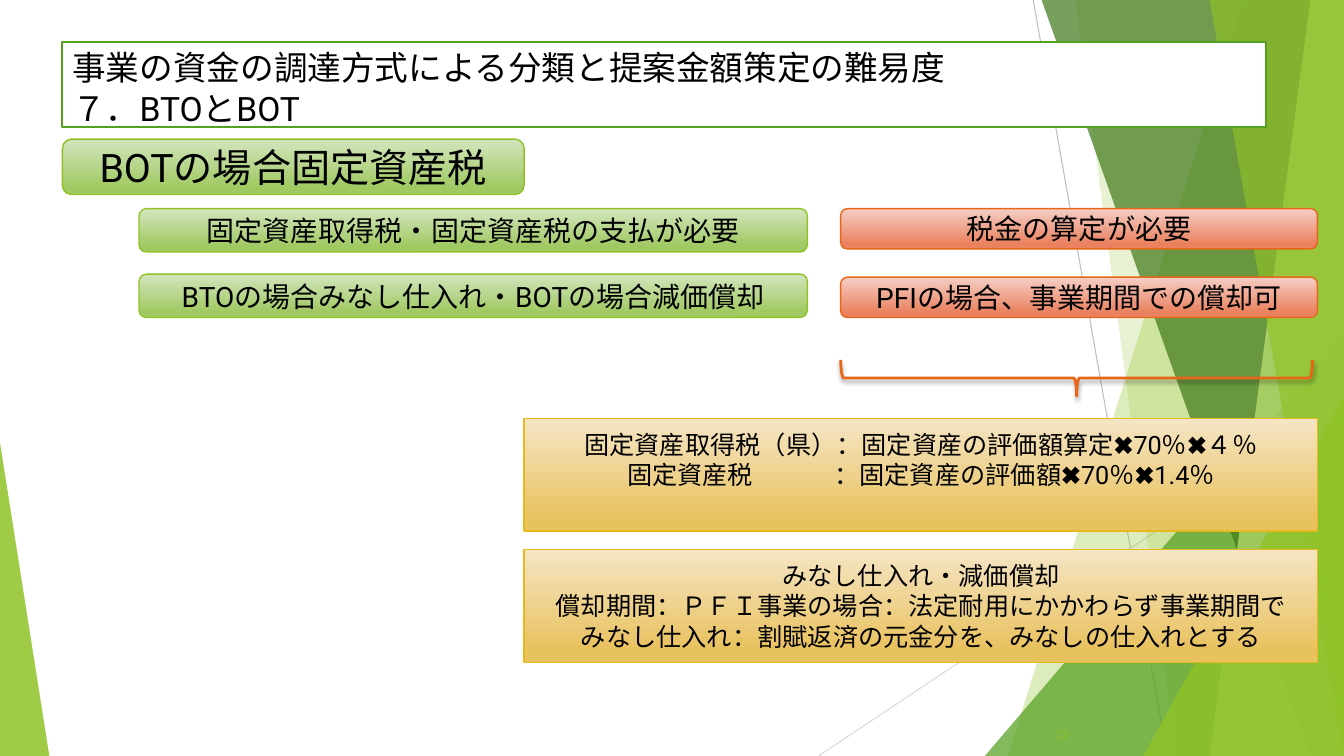
from dataclasses import dataclass

from lxml import etree
from pptx import Presentation
from pptx.dml.color import RGBColor
from pptx.enum.shapes import MSO_CONNECTOR, MSO_SHAPE
from pptx.enum.text import MSO_ANCHOR, PP_ALIGN
from pptx.oxml.ns import qn
from pptx.util import Inches, Pt

STRAIGHT = MSO_CONNECTOR.STRAIGHT
RECT, ROUNDED = MSO_SHAPE.RECTANGLE, MSO_SHAPE.ROUNDED_RECTANGLE
TRIANGLE, BRACE = MSO_SHAPE.ISOSCELES_TRIANGLE, MSO_SHAPE.RIGHT_BRACE
TOP, MIDDLE = MSO_ANCHOR.TOP, MSO_ANCHOR.MIDDLE
LEFT, CENTER = PP_ALIGN.LEFT, PP_ALIGN.CENTER

# Grid of 40 columns by 30 rows
COLUMNS, ROWS = 40, 30
SLIDE_W, SLIDE_H = Inches(13.33), Inches(7.5)
COL, ROW = SLIDE_W / COLUMNS, SLIDE_H / ROWS


@dataclass(frozen=True)
class Theme:
    font: str = "Roboto"
    ink: str = "000000"
    paper: str = "FFFFFF"
    lime: str = "90C226"
    leaf: str = "54A021"
    forest: str = "3F7819"
    pale_lime: str = "C0E474"
    orange: str = "E76618"
    ray: str = "BFBFBF"
    pale_ray: str = "D9D9D9"
    # Each panel style: gradient top, gradient bottom, outline
    green_panel: tuple = ("D3E5BE", "A0C962", "90C226")
    red_panel: tuple = ("F5CEC5", "EA815F", "E76618")
    gold_panel: tuple = ("F5E5C5", "E9C260", "E6B91E")
    title_size: int = 24
    topic_size: int = 28
    point_size: int = 20
    note_size: int = 18
    number_size: int = 9


THEME = Theme()


def rgb(code):
    return RGBColor.from_string(code)


def emu(box):
    left, top, width, height = box
    return [round(v) for v in (left * COL, top * ROW, width * COL, height * ROW)]


def set_all(target, values):
    for name, value in values.items():
        setattr(target, name, value)


def add_plain(slide, kind, box):
    shape = slide.shapes.add_shape(kind, *emu(box))
    shape.shadow.inherit = False
    return shape


def outline(shape, color, width):
    shape.line.color.rgb = rgb(color)
    shape.line.width = Pt(width)


def write(shape, lines, size, color=THEME.ink, align=CENTER, **frame_format):
    frame = shape.text_frame
    set_all(frame, {"word_wrap": True, "vertical_anchor": MIDDLE, **frame_format})
    frame.text = "\n".join(lines)
    for paragraph in frame.paragraphs:
        paragraph.alignment = align
        for run in paragraph.runs:
            set_all(run.font, {"name": THEME.font, "size": Pt(size)})
            run.font.color.rgb = rgb(color)


def add_panel(slide, kind, box, style, lines, size, **frame_format):
    upper, lower, edge = style
    panel = add_plain(slide, kind, box)
    panel.fill.gradient()
    panel.fill.gradient_angle = 270
    for stop, color, position in zip(panel.fill.gradient_stops, (upper, lower), (0, 0.88)):
        stop.color.rgb = rgb(color)
        stop.position = position
    outline(panel, edge, 1)
    write(panel, lines, size, **frame_format)


def tint(shape, color, opacity):
    shape.shadow.inherit = False
    shape.fill.solid()
    shape.fill.fore_color.rgb = rgb(color)
    shape.line.fill.background()
    color_node = shape.fill._xPr.find(qn("a:solidFill"))[0]
    etree.SubElement(color_node, qn("a:alpha"), val=str(opacity * 1000))


def add_ray(slide, start, end, color):
    points = [round(v) for x, y in (start, end) for v in (x * COL, y * ROW)]
    ray = slide.shapes.add_connector(STRAIGHT, *points)
    outline(ray, color, 0.75)
    etree.SubElement(ray._element.spPr, qn("a:effectLst"))


def add_band(slide, box, top_x, bottom_x, color, opacity):
    """Facet from a slanted left edge to the right side of the box."""
    left, top, width, height = box
    right, bottom = left + width, top + height
    builder = slide.shapes.build_freeform(top_x, top, scale=(COL, ROW))
    builder.add_line_segments([(right, top), (right, bottom), (bottom_x, bottom)])
    tint(builder.convert_to_shape(), color, opacity)


def add_corner(slide, box, apex, color, opacity):
    corner = add_plain(slide, TRIANGLE, box)
    corner.adjustments[0] = apex
    tint(corner, color, opacity)


def draw_backdrop(slide, box):
    left, top, width, height = box
    right, bottom = left + width, top + height
    add_ray(slide, (30.75, top), (34.74, bottom), THEME.ray)
    add_ray(slide, (right, 16.12), (24.36, bottom), THEME.pale_ray)

    def bands(facets):
        for facet in facets:
            add_band(slide, box, *facet)

    def right_corner(x, y, color, opacity):
        add_corner(slide, (x, y, right - x, bottom - y), 1, color, opacity)

    bands([(36.84, 30.12, THEME.lime, 30), (31.5, 35.49, THEME.lime, 20)])
    right_corner(29.31, 13.32, THEME.leaf, 72)
    bands([(30.63, 38.73, THEME.forest, 70),
           (39.09, 35.76, THEME.pale_lime, 70),
           (35.88, 39.54, THEME.lime, 65)])
    right_corner(34.02, 15.72, THEME.lime, 80)
    add_corner(slide, (left, 17.56, 1.47, bottom - 17.56), 0, THEME.lime, 85)


def draw_title(slide, box):
    title = add_plain(slide, RECT, box)
    title.fill.solid()
    title.fill.fore_color.rgb = rgb(THEME.paper)
    outline(title, THEME.leaf, 1.5)
    write(title, ["事業の資金の調達方式による分類と提案金額策定の難易度\v７．BTOとBOT"],
          THEME.title_size, align=LEFT, vertical_anchor=TOP)


def draw_stack(slide, box, pitch, kind, style, size, entries):
    """Panels of one size, one below the other, starting at the box."""
    left, top, width, height = box
    for index, (lines, frame_format) in enumerate(entries):
        place = (left, top + index * pitch, width, height)
        add_panel(slide, kind, place, style, lines, size, **frame_format)


def draw_brace(slide, box):
    """Brace turned by a quarter so that it fills the box and points down."""
    left, top, width, height = emu(box)
    brace = slide.shapes.add_shape(BRACE, left + (width - height) // 2,
                                   top + (height - width) // 2, height, width)
    brace.rotation = 90
    brace.fill.background()
    outline(brace, THEME.orange, 2)
    brace.shadow.inherit = False
    effects = brace._element.spPr.find(qn("a:effectLst"))
    shadow = etree.SubElement(effects, qn("a:outerShdw"), blurRad=str(Pt(3)),
                              dist=str(Pt(2)), dir="5400000", rotWithShape="0")
    shade = etree.SubElement(shadow, qn("a:srgbClr"), val=THEME.ink)
    etree.SubElement(shade, qn("a:alpha"), val="35000")


def draw_number(slide, box):
    number = slide.shapes.add_textbox(*emu(box))
    write(number, ["23"], THEME.number_size, THEME.lime)


def main():
    deck = Presentation()
    set_all(deck, {"slide_width": SLIDE_W, "slide_height": SLIDE_H})
    slide = deck.slides.add_slide(deck.slide_layouts[6])

    draw_backdrop(slide, (0, 0, COLUMNS, ROWS))
    draw_number(slide, (30.6, 28.4, 2, 1.5))
    draw_title(slide, (1.86, 1.68, 35.82, 3.36))

    # Topic and its points, with the consequences on the right
    add_panel(slide, ROUNDED, (1.86, 5.52, 13.74, 2.2), THEME.green_panel,
              ["BOTの場合固定資産税"], THEME.topic_size)
    draw_stack(slide, (4.14, 8.28, 19.89, 1.72), 2.6, ROUNDED, THEME.green_panel,
               THEME.point_size,
               [(["固定資産取得税・固定資産税の支払が必要"], {}),
                (["BTOの場合みなし仕入れ・BOTの場合減価償却"], {})])
    draw_stack(slide, (25.02, 8.28, 14.19, 1.6), 2.72, ROUNDED, THEME.red_panel,
               THEME.point_size,
               [(["税金の算定が必要"], {}),
                (["PFIの場合、事業期間での償却可"], {})])
    draw_brace(slide, (25.02, 14.28, 14.04, 1.44))

    # Calculation notes; the first keeps a line's height free at its foot
    draw_stack(slide, (15.6, 16.6, 23.61, 4.48), 5.2, RECT, THEME.gold_panel,
               THEME.note_size,
               [(["固定資産取得税（県）：固定資産の評価額算定✖70％✖４％",
                  "固定資産税　　　 ：固定資産の評価額✖70％✖1.4％"],
                 {"margin_bottom": Inches(0.35)}),
                (["みなし仕入れ・減価償却",
                  "償却期間：ＰＦＩ事業の場合：法定耐用にかかわらず事業期間で",
                  "みなし仕入れ：割賦返済の元金分を、みなしの仕入れとする"], {})])

    deck.save("out.pptx")


if __name__ == "__main__":
    main()
